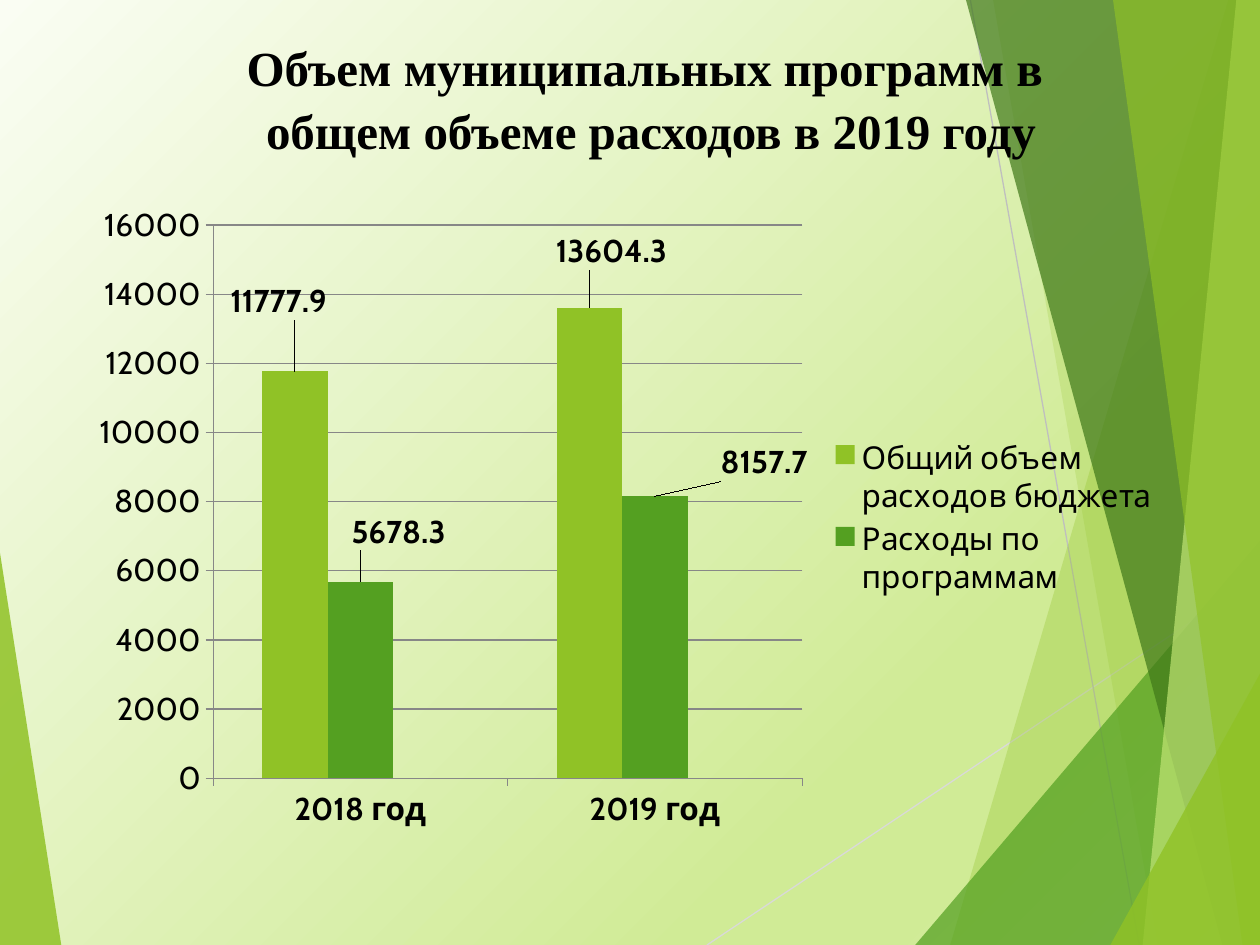
from typing import Any, NamedTuple

from pptx import Presentation
from pptx.chart.data import CategoryChartData
from pptx.dml.color import RGBColor
from pptx.enum.chart import XL_CHART_TYPE as ChartType
from pptx.enum.chart import XL_LABEL_POSITION as LabelPosition
from pptx.enum.chart import XL_LEGEND_POSITION as LegendPosition
from pptx.enum.chart import XL_TICK_MARK as TickMark
from pptx.enum.shapes import MSO_CONNECTOR as Connector
from pptx.enum.text import MSO_ANCHOR as Anchor
from pptx.enum.text import PP_ALIGN as Align
from pptx.oxml import parse_xml
from pptx.oxml.ns import nsdecls, qn
from pptx.oxml.xmlchemy import OxmlElement
from pptx.util import Pt

LIME = RGBColor(0x90, 0xC2, 0x26)
GREEN = RGBColor(0x54, 0xA0, 0x21)
GOLD = RGBColor(0xE6, 0xB9, 0x1E)
DARK_GREEN = RGBColor(0x3F, 0x78, 0x19)
PALE_LIME = RGBColor(0xC0, 0xE4, 0x74)
LIGHT_GRAY = RGBColor(0xD9, 0xD9, 0xD9)
SILVER = RGBColor(0xBF, 0xBF, 0xBF)
AXIS_GRAY = RGBColor(0x87, 0x87, 0x87)
BLACK = RGBColor(0, 0, 0)
BACKDROP = ((0, RGBColor(0xFA, 0xFD, 0xF3)), (74, RGBColor(0xD0, 0xEB, 0x96)),
            (83, RGBColor(0xD0, 0xEB, 0x96)), (100, RGBColor(0xDF, 0xF1, 0xB9)))
WIDTH, HEIGHT = 720, 540


class Facet(NamedTuple):
    corners: tuple[tuple[float, float], ...]
    color: RGBColor
    opacity: int


class Ray(NamedTuple):
    start: tuple[float, float]
    end: tuple[float, float]
    color: RGBColor


class Expense(NamedTuple):
    name: str
    values: tuple[float | None, ...]
    color: RGBColor
    label_shifts: tuple[tuple[float, float], ...] = ()


LEFT_FACET = Facet(((0, 316), (35, HEIGHT), (0, HEIGHT)), LIME, 85)
RAYS = (
    Ray((404, HEIGHT), (WIDTH, 329), LIGHT_GRAY),
    Ray((554.5, 0), (651, HEIGHT), SILVER),
)
RIGHT_FACETS = tuple(
    Facet((*edge, (WIDTH, HEIGHT), (WIDTH, edge_top)), color, opacity)
    for edge, edge_top, color, opacity in (
        (((702, 0), (543, HEIGHT)), 0, LIME, 30),
        (((567.5, 0), (661.5, HEIGHT)), 0, LIME, 20),
        (((WIDTH, 309), (523, HEIGHT)), 309, GREEN, 72),
        (((552, 0), (698.5, HEIGHT)), 0, DARK_GREEN, 70),
        (((706.5, 0), (653, HEIGHT)), 0, PALE_LIME, 70),
        (((636, 0), (710, HEIGHT)), 0, LIME, 65),
        (((WIDTH, 385), (634.5, HEIGHT)), 385, LIME, 80),
    )
)
TITLE = ("Объем муниципальных программ в ", "общем объеме расходов в 2019 году")
YEARS = ("2018 год", "2019 год")
EXPENSES = (
    Expense("Общий объем расходов бюджета", (11777.9, 13604.3), LIME,
            ((-0.015, -0.07), (0.02, -0.05))),
    Expense("Расходы по программам", (5678.3, 8157.7), GREEN,
            ((0.035, -0.04), (0.1, -0.015))),
    Expense("Series 3", (None, None), GOLD),
)
CHART_FONT = {"name": "Cabin", "size": Pt(18)}
BOLD_LABEL = {**CHART_FONT, "bold": True}
TITLE_FONT = {"name": "Times New Roman", "size": Pt(28), "bold": True}


def apply(target: Any, values: dict[str, Any]) -> None:
    for name, value in values.items():
        setattr(target, name, value)


def set_font(font: Any, values: dict[str, Any]) -> None:
    apply(font, values)
    font.color.rgb = BLACK


def paint_backdrop(slide: Any) -> None:
    fill = slide.background.fill
    fill.gradient()
    fill.gradient_angle = 315
    stops = slide.element.find(".//" + qn("a:gsLst"))
    for stop in list(stops):
        stops.remove(stop)
    for percent, color in BACKDROP:
        stops.append(parse_xml(
            f'<a:gs {nsdecls("a")} pos="{percent * 1000}">'
            f'<a:srgbClr val="{color}"/></a:gs>'))


def draw_facet(slide: Any, facet: Facet) -> None:
    first, *rest = [(Pt(x), Pt(y)) for x, y in facet.corners]
    builder = slide.shapes.build_freeform(*first)
    builder.add_line_segments(rest, close=True)
    shape = builder.convert_to_shape()
    shape.shadow.inherit = False
    shape.line.fill.background()
    shape.fill.solid()
    shape.fill.fore_color.rgb = facet.color
    alpha = OxmlElement("a:alpha")
    alpha.set("val", str(facet.opacity * 1000))
    shape.element.spPr.find(".//" + qn("a:srgbClr")).append(alpha)


def draw_ray(slide: Any, ray: Ray) -> None:
    ends = [Pt(value) for value in (*ray.start, *ray.end)]
    line = slide.shapes.add_connector(Connector.STRAIGHT, *ends)
    line.line.color.rgb = ray.color
    line.line.width = Pt(0.75)
    line.element.spPr.append(OxmlElement("a:effectLst"))


def draw_title(slide: Any) -> None:
    frame = slide.shapes.add_textbox(Pt(48), Pt(18), Pt(648), Pt(108)).text_frame
    apply(frame, {"word_wrap": True, "vertical_anchor": Anchor.TOP})
    for index, wording in enumerate(TITLE):
        paragraph = frame.add_paragraph() if index else frame.paragraphs[0]
        apply(paragraph, {"alignment": Align.CENTER, "space_before": Pt(2)})
        run = paragraph.add_run()
        run.text = wording
        set_font(run.font, TITLE_FONT)


def manual_layout(**places: float | str) -> Any:
    """Return a c:layout whose children follow the order of the arguments."""
    children = "".join(f'<c:{name} val="{value}"/>' for name, value in places.items())
    return parse_xml(f'<c:layout {nsdecls("c")}><c:manualLayout>{children}'
                     "</c:manualLayout></c:layout>")


def label_bars(series: Any, expense: Expense) -> None:
    labels = series.data_labels
    apply(labels, {"show_value": True, "position": LabelPosition.OUTSIDE_END})
    set_font(labels.font, BOLD_LABEL)
    for index, (dx, dy) in enumerate(expense.label_shifts):
        label = series.points[index].data_label
        set_font(label.font, BOLD_LABEL)
        label.position = LabelPosition.OUTSIDE_END
        entry = series._element.dLbls.findall(qn("c:dLbl"))[index]
        entry.find(qn("c:idx")).addnext(manual_layout(x=dx, y=dy))


def style_axes(chart: Any) -> None:
    apply(chart.value_axis, {"minimum_scale": 0, "maximum_scale": 16000,
                             "major_unit": 2000, "has_major_gridlines": True})
    for axis in (chart.category_axis, chart.value_axis):
        axis.major_tick_mark = TickMark.OUTSIDE
        set_font(axis.tick_labels.font, CHART_FONT)
        apply(axis.format.line, {"width": Pt(0.75)})
        axis.format.line.color.rgb = AXIS_GRAY
    chart.category_axis.tick_labels.font.bold = True
    gridline = chart.value_axis.major_gridlines.format.line
    gridline.width = Pt(0.75)
    gridline.color.rgb = AXIS_GRAY


def place_legend(chart: Any) -> None:
    """Put the legend on the right, without an entry for the empty series."""
    chart.has_legend = True
    legend = chart.legend
    apply(legend, {"position": LegendPosition.RIGHT, "include_in_layout": False})
    set_font(legend.font, CHART_FONT)
    for old in legend._element.findall(qn("c:layout")):
        legend._element.remove(old)
    entry = parse_xml(f'<c:legendEntry {nsdecls("c")}><c:idx val="2"/>'
                      '<c:delete val="1"/></c:legendEntry>')
    legend._element.find(qn("c:legendPos")).addnext(entry)
    entry.addnext(manual_layout(xMode="edge", yMode="edge",
                                x=0.68, y=0.37, w=0.31, h=0.26))


def draw_expense_chart(slide: Any) -> None:
    data = CategoryChartData()
    data.categories = YEARS
    for expense in EXPENSES:
        data.add_series(expense.name, expense.values)
    chart = slide.shapes.add_chart(ChartType.COLUMN_CLUSTERED, Pt(47), Pt(110),
                                   Pt(623.5), Pt(372), data).chart
    chart.has_title = False
    set_font(chart.font, CHART_FONT)
    plot = chart.plots[0]
    apply(plot, {"gap_width": 150, "overlap": 0, "vary_by_categories": False})
    for series, expense in zip(plot.series, EXPENSES):
        series.format.fill.solid()
        series.format.fill.fore_color.rgb = expense.color
        if expense.label_shifts:
            label_bars(series, expense)
    style_axes(chart)
    place_legend(chart)
    plot_area = chart._chartSpace.chart.plotArea
    for old in plot_area.findall(qn("c:layout")):
        plot_area.remove(old)
    plot_area.insert(0, manual_layout(layoutTarget="inner", xMode="edge", yMode="edge",
                                      x=0.12, y=0.05, w=0.54, h=0.85))


def main() -> None:
    deck = Presentation()
    apply(deck, {"slide_width": Pt(WIDTH), "slide_height": Pt(HEIGHT)})
    slide = deck.slides.add_slide(deck.slide_layouts[6])
    paint_backdrop(slide)
    draw_facet(slide, LEFT_FACET)
    for ray in RAYS:
        draw_ray(slide, ray)
    for facet in RIGHT_FACETS:
        draw_facet(slide, facet)
    draw_title(slide)
    draw_expense_chart(slide)
    deck.save("out.pptx")


if __name__ == "__main__":
    main()
